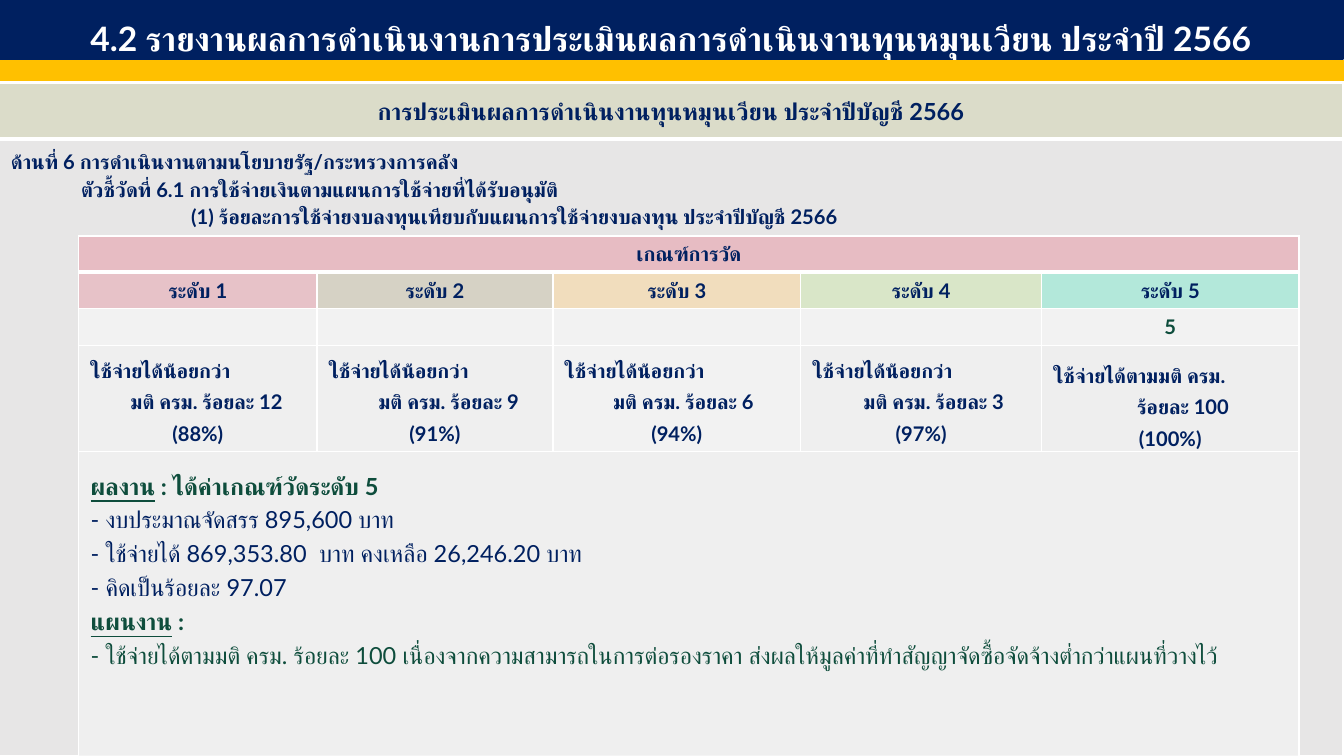
from dataclasses import dataclass

from lxml.etree import SubElement
from pptx import Presentation
from pptx.dml.color import RGBColor
from pptx.enum.lang import MSO_LANGUAGE_ID as Language
from pptx.enum.shapes import MSO_SHAPE as Shape
from pptx.enum.text import MSO_ANCHOR as Anchor, MSO_AUTO_SIZE as AutoSize, PP_ALIGN as Align
from pptx.oxml.ns import qn
from pptx.util import Inches, Pt


@dataclass(frozen=True)
class Theme:
    font: str = "Lato"
    navy: str = "002060"
    green: str = "0E4D3C"
    gold: str = "FFC000"
    white: str = "FFFFFF"
    heading: str = "DBDCC9"
    panel: str = "E7E6E6"
    cell: str = "F2F2F2"
    pink: str = "E8ABB5"
    title_size: int = 20
    large_size: int = 14
    text_size: int = 12


THEME = Theme()
LEVEL_COLORS = [(THEME.pink, 60), ("D6D2C4", 96), ("F9D8A3", 60), ("D1E6B5", 60), ("91EAD2", 60)]
CRITERIA = [
    ("ใช้จ่ายได้น้อยกว่า", "มติ ครม. ร้อยละ 12", "(88%)", 0.33, 80),
    ("ใช้จ่ายได้น้อยกว่า", "มติ ครม. ร้อยละ 9", "(91%)", 0.41, 80),
    ("ใช้จ่ายได้น้อยกว่า", "มติ ครม. ร้อยละ 6", "(94%)", 0.4, 100),
    ("ใช้จ่ายได้น้อยกว่า", "มติ ครม. ร้อยละ 3", "(97%)", 0.42, 80),
    ("ใช้จ่ายได้ตามมติ ครม.", "ร้อยละ 100", "(100%)", 0.69, 70),
]
INDICATORS = [
    ("ด้านที่ 6 การดำเนินงานตามนโยบายรัฐ/กระทรวงการคลัง", 0),
    ("ตัวชี้วัดที่ 6.1 การใช้จ่ายเงินตามแผนการใช้จ่ายที่ได้รับอนุมัติ", 0.58),
    ("(1) ร้อยละการใช้จ่ายงบลงทุนเทียบกับแผนการใช้จ่ายงบลงทุน ประจำปีบัญชี 2566", 1.49),
]
RESULTS = [
    ("ผลงาน", " : ได้ค่าเกณฑ์วัดระดับ 5", THEME.green),
    ("", "- งบประมาณจัดสรร 895,600 บาท", THEME.navy),
    ("", "- ใช้จ่ายได้ 869,353.80  บาท คงเหลือ 26,246.20 บาท", THEME.navy),
    ("", "- คิดเป็นร้อยละ 97.07", THEME.navy),
    ("แผนงาน", " :", THEME.green),
    ("", "- ใช้จ่ายได้ตามมติ ครม. ร้อยละ 100 เนื่องจากความสามารถในการต่อรองราคา "
     "ส่งผลให้มูลค่าที่ทำสัญญาจัดซื้อจัดจ้างต่ำกว่าแผนที่วางไว้", THEME.green),
]


def write(paragraph, text, size=THEME.text_size, color=THEME.navy, bold=True, underline=False,
          align=Align.LEFT, spacing=None, after=None, indent=0):
    paragraph.alignment = align
    if spacing:
        paragraph.line_spacing = spacing
    if after is not None:
        paragraph.space_after = Pt(after)
    if indent:
        paragraph._p.get_or_add_pPr().set("marL", str(Inches(indent)))
    run = paragraph.add_run()
    run.text = text
    font = run.font
    font.name, font.size = THEME.font, Pt(size)
    font.bold, font.underline = bold, underline
    font.language_id = Language.THAI
    font.color.rgb = RGBColor.from_string(color)
    SubElement(font._element, qn("a:cs"), typeface=THEME.font)


def next_paragraph(frame):
    first = frame.paragraphs[0]
    return frame.add_paragraph() if first.runs else first


def paint(fill, color, opacity=100):
    fill.solid()
    fill.fore_color.rgb = RGBColor.from_string(color)
    if opacity < 100:
        clr = fill._xPr.find(qn("a:solidFill")).find(qn("a:srgbClr"))
        SubElement(clr, qn("a:alpha"), val=str(opacity * 1000))


def add_borders(cell, **widths):
    properties = cell._tc.get_or_add_tcPr()
    for index, side in enumerate("LRTB"):
        line = SubElement(properties, qn(f"a:ln{side}"), w=str(Pt(widths.get(side, 1))))
        SubElement(SubElement(line, qn("a:solidFill")), qn("a:srgbClr"), val=THEME.white)
        properties.insert(index, line)


class SlideBuilder:
    def __init__(self, presentation, theme):
        self.theme = theme
        self.slide = presentation.slides.add_slide(presentation.slide_layouts[5])

    def outline(self, shape, color):
        paint(shape.fill, color)
        shape.line.color.rgb = RGBColor.from_string(color)
        shape.line.width = Pt(1)

    def title(self, text, left, top, width, height):
        shape = self.slide.shapes.title
        shape.left, shape.top, shape.width, shape.height = map(Inches, (left, top, width, height))
        self.outline(shape, self.theme.navy)
        frame = shape.text_frame
        frame.word_wrap, frame.auto_size = True, AutoSize.NONE
        frame.vertical_anchor = Anchor.MIDDLE
        write(frame.paragraphs[0], text, size=self.theme.title_size, color=self.theme.white,
              align=Align.CENTER, spacing=1.5)

    def bar(self, left, top, width, height):
        shape = self.slide.shapes.add_shape(Shape.RECTANGLE, *map(Inches, (left, top, width, height)))
        shape.shadow.inherit = False
        self.outline(shape, self.theme.gold)

    def table(self, left, top, columns, rows):
        box = map(Inches, (left, top, sum(columns), sum(rows)))
        table = self.slide.shapes.add_table(len(rows), len(columns), *box).table
        table.first_row = table.horz_banding = False
        for column, width in zip(table.columns, columns):
            column.width = Inches(width)
        for index, (row, height) in enumerate(zip(table.rows, rows)):
            row.height = Inches(height)
            for cell in row.cells:
                paint(cell.fill, self.theme.cell)
                add_borders(cell, T=3 if index == 1 else 1, B=3 if index == 0 else 1)
        return table

    def cell(self, cell, background, opacity=100, anchor=Anchor.TOP, text="", **style):
        paint(cell.fill, background, opacity)
        cell.vertical_anchor = anchor
        if text:
            write(cell.text_frame.paragraphs[0], text, **style)
        return cell.text_frame


def add_indicators(builder):
    table = builder.table(-0.01, 0.69, [11.11], [0.46, 5.1])
    for row in range(2):
        table.cell(row, 0).margin_top = table.cell(row, 0).margin_bottom = Inches(0.07)
    builder.cell(table.cell(0, 0), THEME.heading, anchor=Anchor.MIDDLE, size=THEME.large_size,
                 text="การประเมินผลการดำเนินงานทุนหมุนเวียน ประจำปีบัญชี 2566", align=Align.CENTER)
    frame = builder.cell(table.cell(1, 0), THEME.panel)
    for text, indent in INDICATORS:
        write(next_paragraph(frame), text, spacing=1.1, after=0.5, indent=indent)


def add_criteria(builder):
    table = builder.table(0.65, 1.95, [1.97, 1.95, 2.05, 1.99, 2.13], [0.3, 0.3, 0.3, 0.85, 2.56])
    for row in (0, 4):
        table.cell(row, 0).merge(table.cell(row, 4))
    builder.cell(table.cell(0, 0), THEME.pink, 70, text="เกณฑ์การวัด", align=Align.CENTER)
    for column, (color, opacity) in enumerate(LEVEL_COLORS):
        builder.cell(table.cell(1, column), color, opacity, Anchor.MIDDLE,
                     text=f"ระดับ {column + 1}", align=Align.CENTER)
    for column in range(4):
        paragraph = table.cell(2, column).text_frame.paragraphs[0]
        SubElement(paragraph._p, qn("a:endParaRPr"), sz=str(THEME.text_size * 100))
    builder.cell(table.cell(2, 4), THEME.cell, anchor=Anchor.MIDDLE, text="5",
                 color=THEME.green, align=Align.CENTER)
    for column, (condition, limit, share, indent, opacity) in enumerate(CRITERIA):
        frame = builder.cell(table.cell(3, column), THEME.cell, opacity)
        write(next_paragraph(frame), condition, spacing=1.3)
        write(next_paragraph(frame), limit, spacing=1.3, indent=indent)
        write(next_paragraph(frame), share, spacing=1.3, align=Align.CENTER)
    last = table.cell(3, 4)
    last.margin_top, last.margin_bottom = Inches(0.09), Inches(0.01)
    frame = builder.cell(table.cell(4, 0), THEME.cell, 80)
    for index, (label, text, color) in enumerate(RESULTS):
        paragraph = next_paragraph(frame)
        style = dict(size=THEME.large_size, color=color, spacing=1.2 if index else 1.5)
        if label:
            write(paragraph, label, underline=True, **style)
        write(paragraph, text, bold=bool(label), **style)


def main():
    presentation = Presentation()
    presentation.slide_width, presentation.slide_height = Inches(11.11), Inches(6.25)
    builder = SlideBuilder(presentation, THEME)
    builder.bar(0, 0.5, 11.11, 0.16)
    add_indicators(builder)
    builder.title("4.2 รายงานผลการดำเนินงานการประเมินผลการดำเนินงานทุนหมุนเวียน ประจำปี 2566",
                  -0.01, -0.02, 11.11, 0.51)
    add_criteria(builder)
    presentation.save("out.pptx")


if __name__ == "__main__":
    main()
